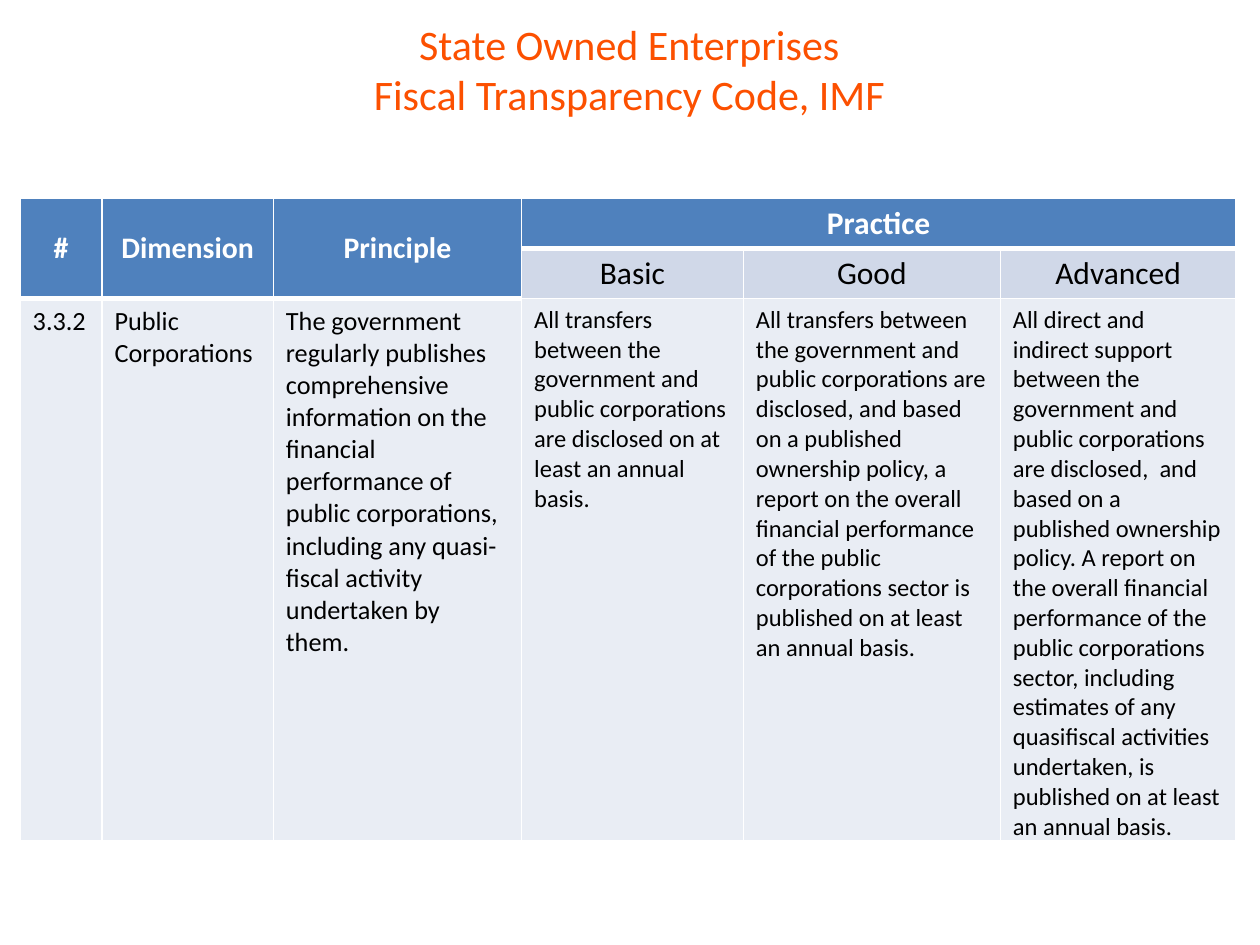
from lxml import etree
from pptx import Presentation
from pptx.dml.color import RGBColor
from pptx.enum.text import MSO_ANCHOR, MSO_AUTO_SIZE, PP_ALIGN
from pptx.oxml.ns import qn
from pptx.util import Inches, Pt

CENTER, LEFT = PP_ALIGN.CENTER, PP_ALIGN.LEFT
MIDDLE, TOP = MSO_ANCHOR.MIDDLE, MSO_ANCHOR.TOP
FIT_SHAPE = MSO_AUTO_SIZE.SHAPE_TO_FIT_TEXT

ORANGE = RGBColor(0xFC, 0x50, 0x00)
BLUE = RGBColor(0x4F, 0x81, 0xBD)
LIGHT_BLUE = RGBColor(0xD0, 0xD8, 0xE8)
PALE_BLUE = RGBColor(0xE9, 0xED, 0xF4)
WHITE = RGBColor(0xFF, 0xFF, 0xFF)
BLACK = RGBColor(0x00, 0x00, 0x00)
FONT = "Calibri"

COLUMN_WIDTHS = [0.65, 1.36, 1.97, 1.76, 2.04, 1.87]
ROW_HEIGHTS = [0.4, 0.4, 4.3]
PRACTICE_COLUMN = 3

ROWS = [
    ["#", "Dimension", "Principle", "Practice", "", ""],
    ["", "", "", "Basic", "Good", "Advanced"],
    [
        "3.3.2",
        "Public Corporations",
        "The government regularly publishes comprehensive information on the "
        "financial performance of public corporations, including any "
        "quasi-fiscal activity undertaken by them.",
        "All transfers between the government and public corporations are "
        "disclosed on at least an annual basis.",
        "All transfers between the government and public corporations are "
        "disclosed, and based on a published ownership policy, a report on the "
        "overall financial performance of the public corporations sector is "
        "published on at least an annual basis.",
        "All direct and indirect support between the government and public "
        "corporations are disclosed,  and based on a published ownership "
        "policy. A report on the overall financial performance of the public "
        "corporations sector, including estimates of any quasifiscal "
        "activities undertaken, is published on at least an annual basis.",
    ],
]


def add_border(cell, side, points):
    """Draw a white line on one side (L, R, T or B); call before filling."""
    properties = cell._tc.get_or_add_tcPr()
    line = etree.SubElement(properties, qn(f"a:ln{side}"), w=str(Pt(points)))
    fill = etree.SubElement(line, qn("a:solidFill"))
    etree.SubElement(fill, qn("a:srgbClr"), val=str(WHITE))


presentation = Presentation()
presentation.slide_width = Inches(10)
presentation.slide_height = Inches(7.5)
slide = presentation.slides.add_slide(presentation.slide_layouts[5])

title = slide.shapes.title
title.left, title.top = Inches(-0.08), Inches(0.09)
title.width, title.height = Inches(10.15), Inches(0.91)
title.text_frame.text = "State Owned Enterprises\nFiscal Transparency Code, IMF"
title.text_frame.auto_size = FIT_SHAPE
for paragraph in title.text_frame.paragraphs:
    paragraph.alignment = CENTER
    paragraph.font.name = FONT
    paragraph.font.size = Pt(24)
    paragraph.font.color.rgb = ORANGE

table = slide.shapes.add_table(
    len(ROWS), len(COLUMN_WIDTHS), Inches(0.16), Inches(1.57),
    Inches(sum(COLUMN_WIDTHS)), Inches(sum(ROW_HEIGHTS)),
).table
for column, width in zip(table.columns, COLUMN_WIDTHS):
    column.width = Inches(width)
for row, height in zip(table.rows, ROW_HEIGHTS):
    row.height = Inches(height)

for column_index in range(PRACTICE_COLUMN):
    table.cell(0, column_index).merge(table.cell(1, column_index))
table.cell(0, PRACTICE_COLUMN).merge(table.cell(0, len(COLUMN_WIDTHS) - 1))

for row_index, texts in enumerate(ROWS):
    for column_index, text in enumerate(texts):
        cell = table.cell(row_index, column_index)
        in_practice = column_index >= PRACTICE_COLUMN
        is_body = row_index == 2
        is_header = row_index == 0 or (row_index == 1 and not in_practice)
        below_header = row_index == 1 or (is_body and not in_practice)

        for side, points in (("L", 1), ("R", 1),
                             ("T", 3 if below_header else 1),
                             ("B", 3 if is_header else 1)):
            add_border(cell, side, points)
        cell.fill.solid()
        cell.fill.fore_color.rgb = (
            BLUE if is_header else PALE_BLUE if is_body else LIGHT_BLUE)
        cell.vertical_anchor = MIDDLE if is_header else TOP
        if is_body:
            cell.margin_bottom = 0

        if not text:
            continue
        cell.text = text
        paragraph = cell.text_frame.paragraphs[0]
        paragraph.alignment = LEFT if is_body else CENTER
        paragraph.font.name = FONT
        if is_body:
            paragraph.font.size = Pt(14 if in_practice else 15)
        else:
            paragraph.font.size = Pt(18 if in_practice else 17)
        paragraph.font.bold = is_header
        paragraph.font.color.rgb = WHITE if is_header else BLACK

presentation.save("out.pptx")
